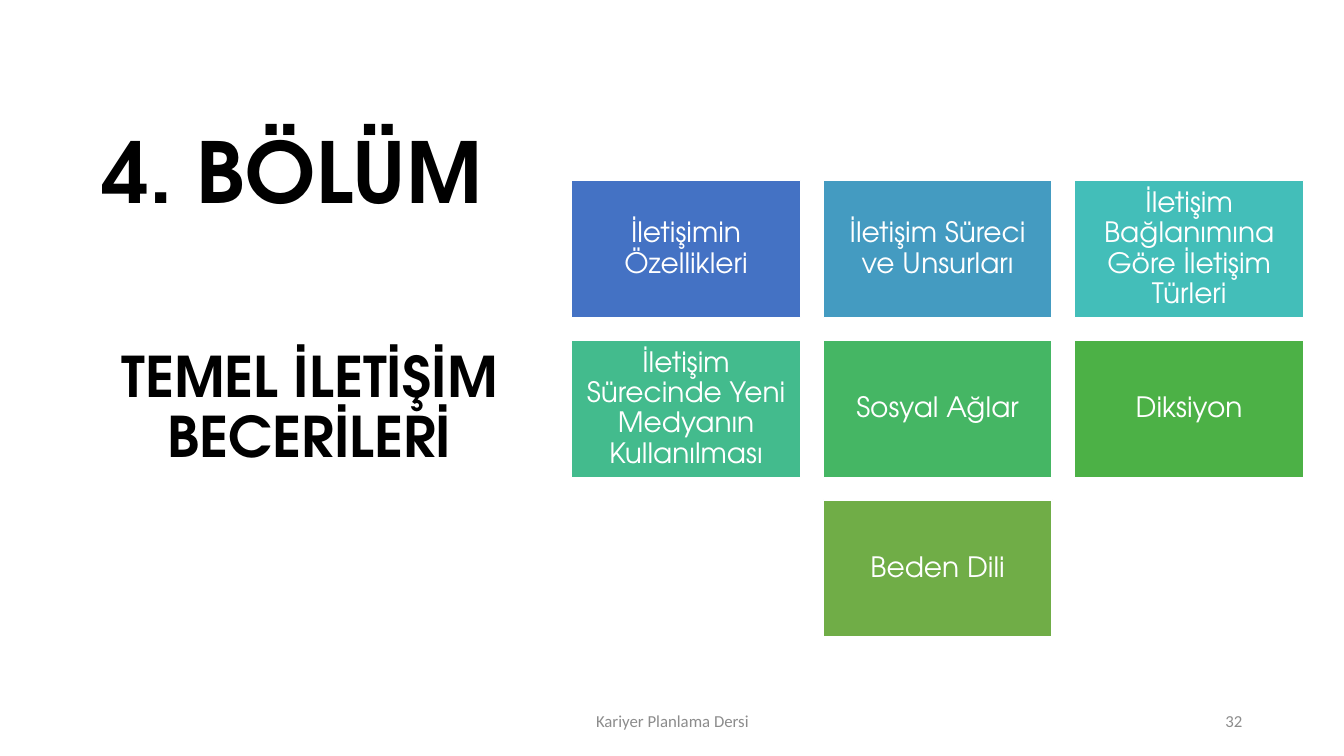
from pptx import Presentation
from pptx.dml.color import RGBColor
from pptx.enum.shapes import MSO_SHAPE as Shape
from pptx.enum.text import MSO_ANCHOR as Anchor, PP_ALIGN as Align
from pptx.util import Inches, Pt

BLACK = RGBColor(0x00, 0x00, 0x00)
WHITE = RGBColor(0xFF, 0xFF, 0xFF)
GREY = RGBColor(0x8C, 0x8C, 0x8C)
BLUE = RGBColor(0x44, 0x72, 0xC4)
SKY = RGBColor(0x44, 0x9B, 0xC1)
TURQUOISE = RGBColor(0x43, 0xBE, 0xB9)
MINT = RGBColor(0x43, 0xBB, 0x8D)
EMERALD = RGBColor(0x45, 0xB6, 0x64)
GREEN = RGBColor(0x4C, 0xB1, 0x46)
OLIVE = RGBColor(0x70, 0xAD, 0x47)

# Topic grid, in inches
COLUMNS = 3
GRID_LEFT, GRID_TOP, GRID_WIDTH = 5.67, 1.79, 7.26
TILE_WIDTH, TILE_HEIGHT = 2.27, 1.36
GAP = (GRID_WIDTH - COLUMNS * TILE_WIDTH) / (COLUMNS - 1)

TOPICS = [
    ("İletişimin Özellikleri", BLUE),
    ("İletişim Süreci ve Unsurları", SKY),
    ("İletişim Bağlanımına Göre İletişim Türleri", TURQUOISE),
    ("İletişim Sürecinde Yeni Medyanın Kullanılması", MINT),
    ("Sosyal Ağlar", EMERALD),
    ("Diksiyon", GREEN),
    ("Beden Dili", OLIVE),
]


class SlideBuilder:
    heading_font = "TeX Gyre Adventor"
    footer_font = "Calibri"

    def __init__(self, page):
        self.page = page

    def set_text(self, box, text, size, color, font, align, anchor, bold=False, spacing=0.9):
        frame = box.text_frame
        frame.word_wrap = True
        frame.vertical_anchor = anchor
        para = frame.paragraphs[0]
        para.text = text
        para.alignment = align
        para.line_spacing = spacing
        para.font.name = font
        para.font.size = Pt(size)
        para.font.bold = bold
        para.font.color.rgb = color

    def textbox(self, left, top, width, height):
        return self.page.shapes.add_textbox(
            Inches(left), Inches(top), Inches(width), Inches(height))

    def heading(self, text, left, top, width, height, size, align, anchor):
        box = self.textbox(left, top, width, height)
        self.set_text(box, text, size, BLACK, self.heading_font, align, anchor, bold=True)

    def footer(self, text, left, width, align):
        box = self.textbox(left, 6.95, width, 0.4)
        self.set_text(box, text, 12, GREY, self.footer_font, align, Anchor.MIDDLE, spacing=1.0)

    def tile(self, text, fill, left, top):
        box = self.page.shapes.add_shape(
            Shape.RECTANGLE, Inches(left), Inches(top),
            Inches(TILE_WIDTH), Inches(TILE_HEIGHT))
        box.shadow.inherit = False
        box.fill.solid()
        box.fill.fore_color.rgb = fill
        box.line.color.rgb = WHITE
        box.line.width = Pt(1)
        frame = box.text_frame
        frame.margin_left = frame.margin_right = Inches(0.08)
        frame.margin_top = frame.margin_bottom = Inches(0.08)
        self.set_text(box, text, 20, WHITE, self.heading_font, Align.CENTER, Anchor.MIDDLE)

    def tile_grid(self, topics):
        for start in range(0, len(topics), COLUMNS):
            row = topics[start:start + COLUMNS]
            top = GRID_TOP + start // COLUMNS * (TILE_HEIGHT + GAP)
            # A short row is centred under the full ones
            indent = (COLUMNS - len(row)) / 2
            for column, (text, fill) in enumerate(row):
                left = GRID_LEFT + (column + indent) * (TILE_WIDTH + GAP)
                self.tile(text, fill, left, top)


def main():
    deck = Presentation()
    deck.slide_width, deck.slide_height = Inches(13.33), Inches(7.5)
    builder = SlideBuilder(deck.slides.add_slide(deck.slide_layouts[6]))

    # Chapter number and title
    builder.heading("4. BÖLÜM", 0.92, 0.5, 4.3, 1.75, 60, Align.LEFT, Anchor.BOTTOM)
    builder.heading("TEMEL İLETİŞİM BECERİLERİ", 0.92, 2.76, 4.3, 2.6, 40,
                    Align.CENTER, Anchor.MIDDLE)

    # Topics of the chapter
    builder.tile_grid(TOPICS)

    # Footer and page number
    builder.footer("Kariyer Planlama Dersi", 4.42, 4.5, Align.CENTER)
    builder.footer("32", 9.42, 3, Align.RIGHT)

    deck.save("out.pptx")


if __name__ == "__main__":
    main()
